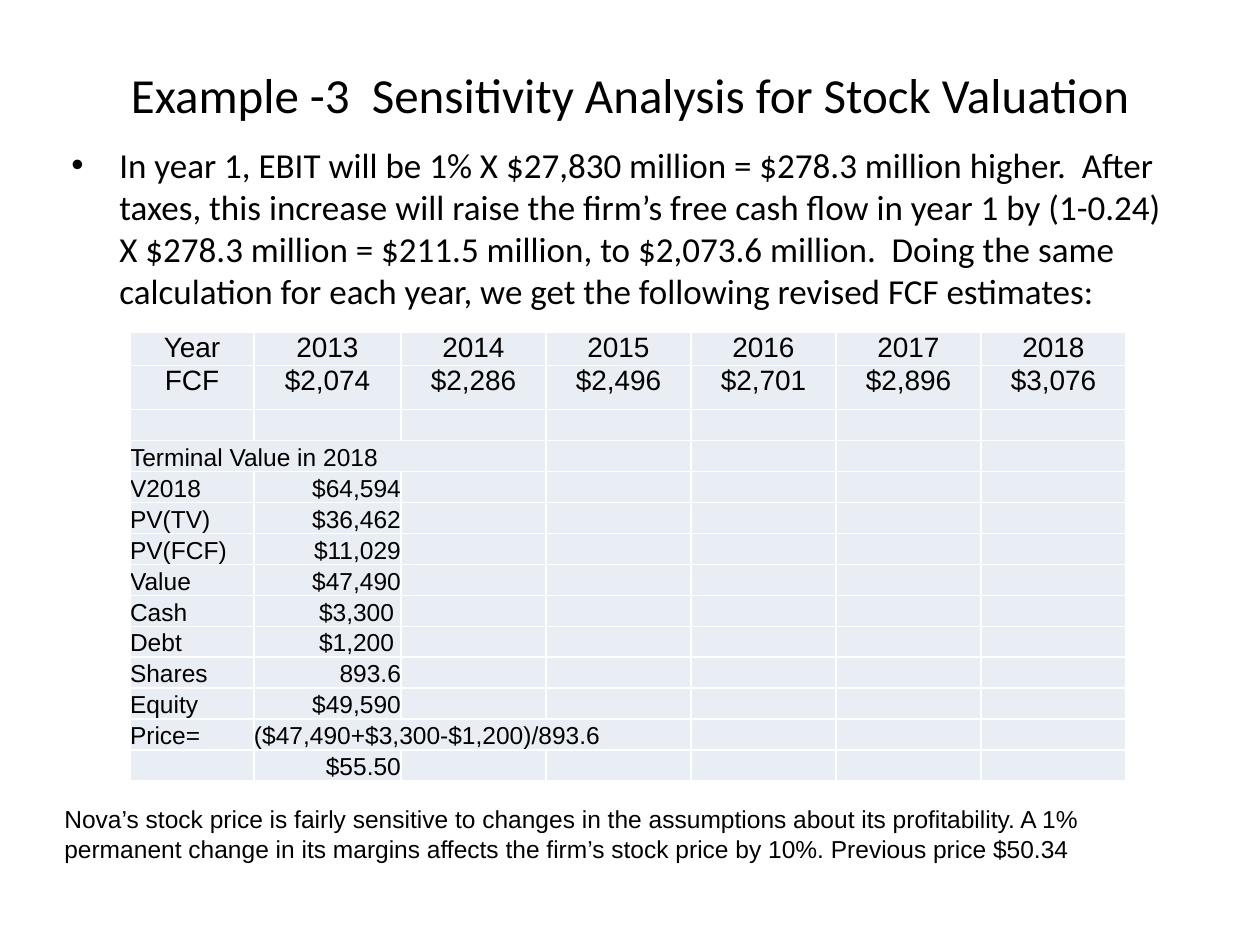
from lxml import etree
from pptx import Presentation
from pptx.dml.color import RGBColor
from pptx.enum.text import MSO_ANCHOR, PP_ALIGN
from pptx.oxml.ns import qn
from pptx.util import Emu, Pt

LEFT, CENTER, RIGHT = PP_ALIGN.LEFT, PP_ALIGN.CENTER, PP_ALIGN.RIGHT
TOP, MIDDLE, BOTTOM = MSO_ANCHOR.TOP, MSO_ANCHOR.MIDDLE, MSO_ANCHOR.BOTTOM
BLACK, CELL_FILL = "000000", "E9EDF4"

TITLE = "Example -3  Sensitivity Analysis for Stock Valuation"
BODY = (
    "In year 1, EBIT will be 1% X $27,830 million = $278.3 million higher.  "
    "After taxes, this increase will raise the firm’s free cash flow in year 1 "
    "by (1-0.24) X $278.3 million = $211.5 million, to $2,073.6 million.  "
    "Doing the same calculation for each year, we get the following revised "
    "FCF estimates:"
)
NOTE = (
    "Nova’s stock price is fairly sensitive to changes in the assumptions about "
    "its profitability. A 1% permanent change in its margins affects the firm’s "
    "stock price by 10%. Previous price $50.34"
)
ROWS = [
    ["Year", "2013", "2014", "2015", "2016", "2017", "2018"],
    ["FCF", "$2,074", "$2,286", "$2,496", "$2,701", "$2,896", "$3,076"],
    [],
    ["Terminal Value in 2018"],
    ["V2018", "$64,594"],
    ["PV(TV)", "$36,462"],
    ["PV(FCF)", "$11,029"],
    ["Value", "$47,490"],
    ["Cash", "$3,300 "],
    ["Debt", "$1,200 "],
    ["Shares", "893.6"],
    ["Equity", "$49,590"],
    ["Price=", "($47,490+$3,300-$1,200)/893.6"],
    ["", "$55.50"],
]
FORECAST_ROWS = 2
MERGES = [(3, 0, 2), (12, 1, 3)]
COL_WIDTHS = [124, 147] + [145] * 5
ROW_HEIGHTS = [31, 44] + [31] * 12


def px(n):
    return Emu(round(n * 914400 / 126))


def color(hex_text):
    return RGBColor.from_string(hex_text)


def write(tf, text, size, font, align=LEFT, anchor=TOP):
    tf.word_wrap = True
    tf.vertical_anchor = anchor
    tf.text = text
    p = tf.paragraphs[0]
    p.alignment = align
    for r in p.runs:
        r.font.size = Pt(size)
        r.font.name = font
        r.font.color.rgb = color(BLACK)
    return p


def add_text(s, box, text, size, font):
    tb = s.shapes.add_textbox(*map(px, box))
    return write(tb.text_frame, text, size, font)


def add_bullet(p, indent):
    pPr = p._p.get_or_add_pPr()
    pPr.set("marL", str(px(indent)))
    pPr.set("indent", str(-px(indent)))
    etree.SubElement(pPr, qn("a:buFont")).set("typeface", "Arial")
    etree.SubElement(pPr, qn("a:buChar")).set("char", "•")


def fill_cell(cell, text, row, col):
    cell.margin_left = cell.margin_right = 0
    cell.margin_top = cell.margin_bottom = 0
    cell.fill.solid()
    cell.fill.fore_color.rgb = color(CELL_FILL)
    if row < FORECAST_ROWS:
        size, align, anchor = 16, CENTER, TOP
    else:
        align = RIGHT if col and not cell.is_merge_origin else LEFT
        size, anchor = 14, BOTTOM
    p = write(cell.text_frame, text, size, "Arial", align)
    cell.vertical_anchor = anchor
    if not text:
        etree.SubElement(p._p, qn("a:endParaRPr")).set("sz", str(size * 100))


def add_valuation_table(s, left, top):
    gf = s.shapes.add_table(
        len(ROWS), len(COL_WIDTHS), px(left), px(top),
        px(sum(COL_WIDTHS)), px(sum(ROW_HEIGHTS)),
    )
    table = gf.table
    table.first_row = table.horz_banding = False
    for col, width in zip(table.columns, COL_WIDTHS):
        col.width = px(width)
    for row, height in zip(table.rows, ROW_HEIGHTS):
        row.height = px(height)
    for row, first, last in MERGES:
        table.cell(row, first).merge(table.cell(row, last))
    for i, values in enumerate(ROWS):
        for j in range(len(COL_WIDTHS)):
            text = values[j] if j < len(values) else ""
            fill_cell(table.cell(i, j), text, i, j)


def main():
    prs = Presentation()
    prs.slide_width, prs.slide_height = px(1260), px(945)
    s = prs.slides.add_slide(prs.slide_layouts[5])
    title = s.shapes.title
    title.left, title.top, title.width, title.height = map(px, (63, 38, 1134, 112))
    write(title.text_frame, TITLE, 28, "Calibri", CENTER, MIDDLE)
    add_bullet(add_text(s, (59, 137, 1134, 624), BODY, 20, "Calibri"), 48)
    add_valuation_table(s, 130, 332)
    add_text(s, (52, 798, 1162, 72), NOTE, 14, "Arial")
    prs.save("out.pptx")


if __name__ == "__main__":
    main()
